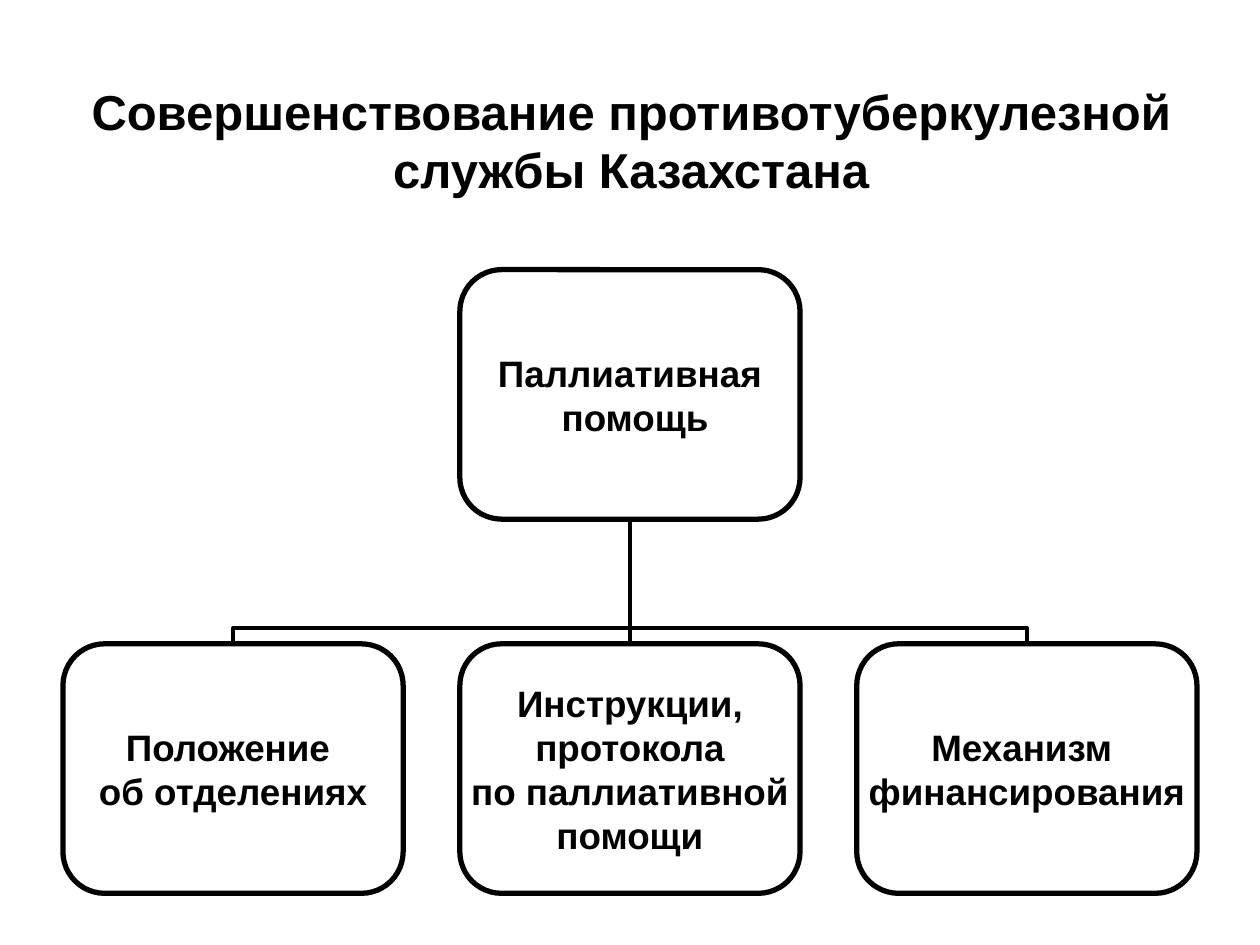
from dataclasses import dataclass

from lxml.etree import SubElement
from pptx import Presentation
from pptx.dml.color import RGBColor
from pptx.enum.shapes import MSO_CONNECTOR as Link, MSO_SHAPE as Preset
from pptx.enum.text import MSO_ANCHOR as Anchor, PP_ALIGN as Align
from pptx.oxml.ns import qn
from pptx.shapes.autoshape import Shape
from pptx.shapes.connector import Connector
from pptx.slide import Slide
from pptx.text.text import TextFrame
from pptx.util import Inches, Pt


@dataclass(frozen=True)
class Theme:
    font: str = "Arial"
    ink: RGBColor = RGBColor(0, 0, 0)
    paper: RGBColor = RGBColor(255, 255, 255)
    title_size: int = 28
    box_size: int = 21
    box_line: float = 3
    link_line: float = 2.25


@dataclass(frozen=True)
class Box:
    column: int
    top: float
    lines: tuple[str, ...]

    @property
    def left(self) -> float:
        return MARGIN + self.column * COLUMN_STEP

    @property
    def center(self) -> float:
        return self.left + BOX_WIDTH / 2


THEME = Theme()
MARGIN, COLUMN_STEP = 0.5, 3.15
BOX_WIDTH, BOX_HEIGHT = 2.7, 1.98
PARENT_TOP, CHILD_TOP = 2.14, 5.11
TOP, BOTTOM = 0, 2  # connection sites

PARENT = Box(1, PARENT_TOP, ("Паллиативная", " помощь"))
CHILDREN = [
    Box(column, CHILD_TOP, lines)
    for column, lines in enumerate([
        ("Положение ", "об отделениях"),
        ("Инструкции,", "протокола", " по паллиативной ", "помощи"),
        ("Механизм ", "финансирования"),
    ])
]


def write_lines(frame: TextFrame, lines: tuple[str, ...], size: int) -> None:
    frame.vertical_anchor = Anchor.MIDDLE
    font_format = {"name": THEME.font, "size": Pt(size), "bold": True}
    for index, line in enumerate(lines):
        paragraph = frame.add_paragraph() if index else frame.paragraphs[0]
        paragraph.alignment = Align.CENTER
        run = paragraph.add_run()
        run.text = line
        for key, value in font_format.items():
            setattr(run.font, key, value)
        run.font.color.rgb = THEME.ink


def draw_title(slide: Slide, text: str) -> None:
    title = slide.shapes.add_textbox(Inches(0.51), Inches(0.6), Inches(9), Inches(1.02))
    title.text_frame.word_wrap = True
    write_lines(title.text_frame, (text,), THEME.title_size)


def draw_box(slide: Slide, box: Box) -> Shape:
    card = slide.shapes.add_shape(
        Preset.ROUNDED_RECTANGLE,
        Inches(box.left), Inches(box.top), Inches(BOX_WIDTH), Inches(BOX_HEIGHT),
    )
    card.shadow.inherit = False
    card.adjustments[0] = 0.167
    card.fill.solid()
    card.fill.fore_color.rgb = THEME.paper
    card.line.color.rgb = THEME.ink
    card.line.width = Pt(THEME.box_line)
    frame_format = {"word_wrap": False, "margin_left": 0, "margin_right": 0,
                    "margin_top": 0, "margin_bottom": 0}
    for key, value in frame_format.items():
        setattr(card.text_frame, key, value)
    write_lines(card.text_frame, box.lines, THEME.box_size)
    return card


def bend(link: Connector, child: Box) -> None:
    """Turn an elbow so that it leaves the child upwards and meets the parent."""
    rise = CHILD_TOP - PARENT_TOP - BOX_HEIGHT
    run = abs(child.center - PARENT.center)
    middle_x = (child.center + PARENT.center) / 2
    middle_y = CHILD_TOP - rise / 2
    placement = {"left": middle_x - rise / 2, "top": middle_y - run / 2,
                 "width": rise, "height": run}
    for key, value in placement.items():
        setattr(link, key, Inches(value))

    from_right = child.center > PARENT.center
    properties = link._element.spPr
    turn = {"rot": str((90 if from_right else 270) * 60000),
            "flipH": str(int(from_right)), "flipV": "0"}
    for key, value in turn.items():
        properties.find(qn("a:xfrm")).set(key, value)
    geometry = properties.find(qn("a:prstGeom"))
    guides = geometry.find(qn("a:avLst"))
    if guides is None:
        guides = SubElement(geometry, qn("a:avLst"))
    SubElement(guides, qn("a:gd"), name="adj1", fmla="val 12600")


def draw_link(slide: Slide, child: Box, child_card: Shape, parent_card: Shape) -> None:
    straight = child.column == PARENT.column
    link = slide.shapes.add_connector(
        Link.STRAIGHT if straight else Link.ELBOW,
        Inches(child.center), Inches(CHILD_TOP),
        Inches(PARENT.center), Inches(PARENT_TOP + BOX_HEIGHT),
    )
    link.begin_connect(child_card, TOP)
    link.end_connect(parent_card, BOTTOM)
    if not straight:
        bend(link, child)
    link.line.color.rgb = THEME.ink
    link.line.width = Pt(THEME.link_line)
    SubElement(link._element.spPr, qn("a:effectLst"))


def main() -> None:
    deck = Presentation()
    deck.slide_width, deck.slide_height = Inches(10), Inches(7.5)
    slide = deck.slides.add_slide(deck.slide_layouts[6])

    # Title
    draw_title(slide, "Совершенствование противотуберкулезной службы Казахстана")

    # Parent box, its children and the links between them
    parent_card = draw_box(slide, PARENT)
    for child in CHILDREN:
        draw_link(slide, child, draw_box(slide, child), parent_card)

    deck.save("out.pptx")


if __name__ == "__main__":
    main()
